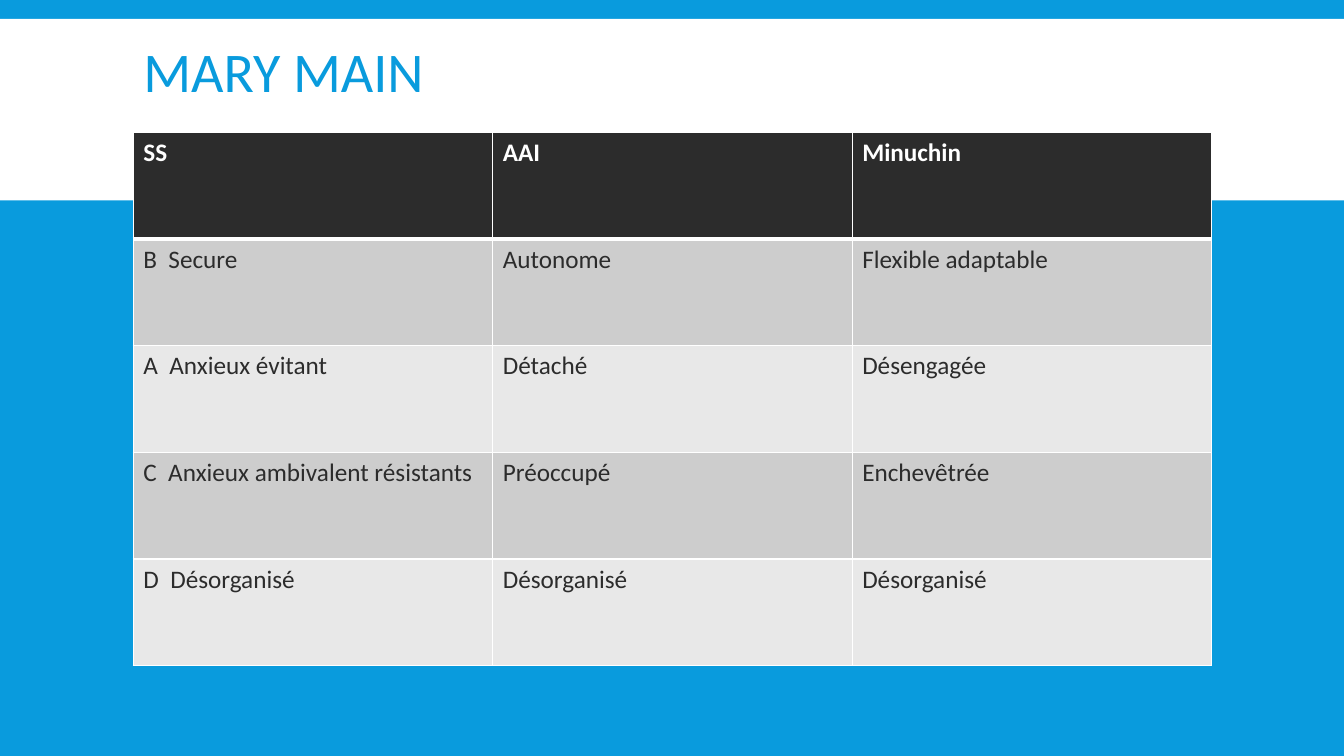
import pptx
import pptx.dml.color
import pptx.enum.shapes
import pptx.enum.text
import pptx.oxml.ns
import pptx.util
import lxml.etree
import dataclasses

PX = 9525  # EMU in one px, 96 px to the inch


@dataclasses.dataclass(frozen=True)
class Theme:
    font: str = "Calibri"
    blue: str = "099BDD"
    white: str = "FFFFFF"
    dark: str = "2C2C2C"
    bands: tuple = ("CDCDCD", "E8E8E8")
    title: int = 40
    body: int = 18
    thin: int = 1
    thick: int = 3


THEME = Theme()

ROWS = [
    ("SS", "AAI", "Minuchin"),
    ("B  Secure", "Autonome", "Flexible adaptable"),
    ("A  Anxieux évitant", "Détaché", "Désengagée"),
    ("C  Anxieux ambivalent résistants", "Préoccupé", "Enchevêtrée"),
    ("D  Désorganisé", "Désorganisé", "Désorganisé"),
]


def scale(*sizes):
    return [size * PX for size in sizes]


def paint(fill, color):
    fill.solid()
    fill.fore_color.rgb = pptx.dml.color.RGBColor.from_string(color)


def style(frame, size, color, bold=False):
    for para in frame.paragraphs:
        for run in para.runs:
            run.font.name = THEME.font
            run.font.size = pptx.util.Pt(size)
            run.font.bold = bold
            run.font.color.rgb = pptx.dml.color.RGBColor.from_string(color)


def add_title(slide, text, box):
    title = slide.shapes.title
    title.left, title.top, title.width, title.height = scale(*box)
    frame = title.text_frame
    frame.text = text
    frame.auto_size = pptx.enum.text.MSO_AUTO_SIZE.NONE
    frame.vertical_anchor = pptx.enum.text.MSO_ANCHOR.MIDDLE
    para = frame.paragraphs[0]
    para.alignment = pptx.enum.text.PP_ALIGN.LEFT
    para.line_spacing = 0.85
    style(frame, THEME.title, THEME.blue)


def add_band(slide, box):
    """Add the white band behind the title."""
    band = slide.shapes.add_shape(
        pptx.enum.shapes.MSO_SHAPE.RECTANGLE, *scale(*box))
    band.shadow.inherit = False
    paint(band.fill, THEME.white)
    band.line.fill.background()
    slide.shapes.title._element.addprevious(band._element)


def add_edge(cell, side, width):
    """Draw one border; call before the cell is filled, as the schema orders."""
    name = pptx.oxml.ns.qn
    line = lxml.etree.SubElement(
        cell._tc.get_or_add_tcPr(), name("a:ln" + side),
        w=str(pptx.util.Pt(width)))
    fill = lxml.etree.SubElement(line, name("a:solidFill"))
    lxml.etree.SubElement(fill, name("a:srgbClr"), val=THEME.white)


def fill_cell(cell, text, row):
    head = row == 0
    cell.text = text
    style(cell.text_frame, THEME.body,
          THEME.white if head else THEME.dark, head)
    thick = {"T": row == 1, "B": head}
    for side in "LRTB":
        add_edge(cell, side, THEME.thick if thick.get(side) else THEME.thin)
    paint(cell.fill, THEME.dark if head else THEME.bands[(row - 1) % 2])


def add_grid(slide, rows, box):
    table = slide.shapes.add_table(
        len(rows), len(rows[0]), *scale(*box)).table
    for row, texts in enumerate(rows):
        for col, text in enumerate(texts):
            fill_cell(table.cell(row, col), text, row)


def main():
    deck = pptx.Presentation()
    deck.slide_width, deck.slide_height = scale(1280, 720)
    slide = deck.slides.add_slide(deck.slide_layouts.get_by_name("Title Only"))
    paint(slide.background.fill, THEME.blue)
    add_band(slide, (0, 18, 1280, 173))
    add_title(slide, "MARY MAIN", (127, 30, 1027, 83))
    add_grid(slide, ROWS, (127, 126, 1027, 508))
    deck.save("out.pptx")


if __name__ == "__main__":
    main()
